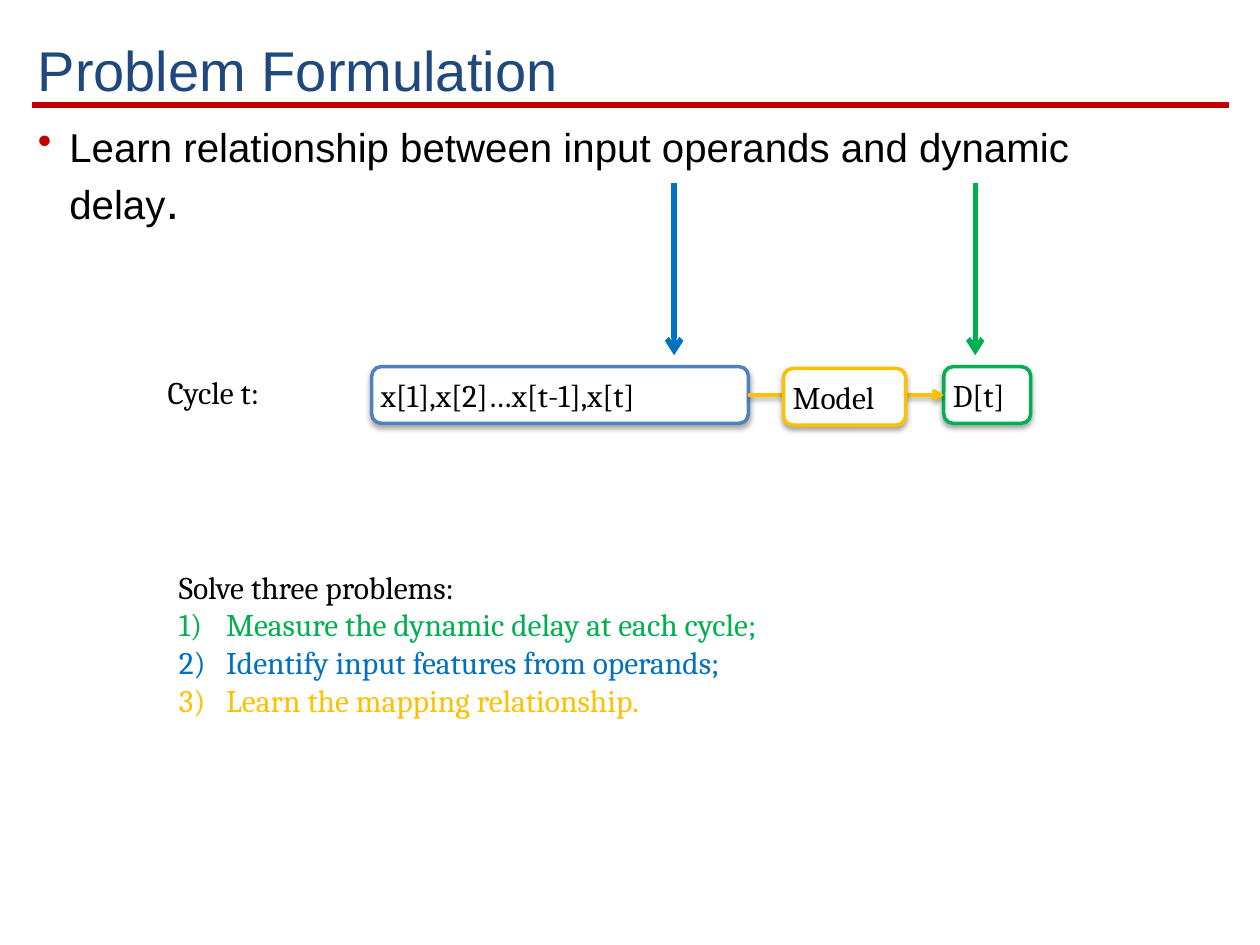
from dataclasses import dataclass
from typing import Optional

from pptx import Presentation
from pptx.dml.color import RGBColor
from pptx.enum.shapes import MSO_CONNECTOR, MSO_SHAPE
from pptx.enum.text import MSO_ANCHOR, MSO_AUTO_SIZE, PP_ALIGN
from pptx.oxml.ns import qn
from pptx.util import Pt
from lxml.etree import SubElement

BLACK = RGBColor(0, 0, 0)
WHITE = RGBColor(255, 255, 255)
NAVY = RGBColor(0x1F, 0x49, 0x7D)
RED = RGBColor(0xC0, 0, 0)
STEEL = RGBColor(0x4F, 0x81, 0xBD)
BLUE = RGBColor(0, 0x70, 0xC0)
GREEN = RGBColor(0, 0xB0, 0x50)
AMBER = RGBColor(0xFF, 0xC0, 0)

INSET = Pt(3.6)
FRAME = dict(word_wrap=True, margin_left=INSET, margin_right=INSET,
             margin_top=INSET, margin_bottom=INSET)


@dataclass
class Area:
    left: float
    top: float
    width: float
    height: float

    def lengths(self) -> list:
        return [Pt(v) for v in (self.left, self.top, self.width, self.height)]


@dataclass
class Style:
    size: float = 18
    font: str = "Cambria"
    color: RGBColor = BLACK


@dataclass
class Bullet:
    indent: float
    tag: str
    attrs: dict
    color: Optional[RGBColor] = None


@dataclass
class Block:
    text: str
    area: Area
    color: RGBColor


def set_frame(s, anchor=MSO_ANCHOR.TOP, auto_size=MSO_AUTO_SIZE.NONE):
    tf = s.text_frame
    values = dict(FRAME, vertical_anchor=anchor, auto_size=auto_size)
    for name, value in values.items():
        setattr(tf, name, value)
    return tf


def add_run(p, text: str, style: Style) -> None:
    r = p.add_run()
    r.text = text
    for name, value in dict(size=Pt(style.size), name=style.font).items():
        setattr(r.font, name, value)
    r.font.color.rgb = style.color


def set_bullet(p, bullet: Bullet) -> None:
    pPr = p._p.get_or_add_pPr()
    pPr.set("marL", str(Pt(bullet.indent)))
    pPr.set("indent", str(-Pt(bullet.indent)))
    if bullet.color is not None:
        clr = SubElement(pPr, qn("a:buClr"))
        SubElement(clr, qn("a:srgbClr"), val=str(bullet.color))
    SubElement(pPr, qn(bullet.tag), **bullet.attrs)


def set_shadow(s, visible: bool) -> None:
    effects = SubElement(s.element.spPr, qn("a:effectLst"))
    if visible:
        shadow = SubElement(effects, qn("a:outerShdw"), blurRad=str(Pt(3)),
                            dist=str(Pt(1.8)), dir="5400000", rotWithShape="0")
        clr = SubElement(shadow, qn("a:srgbClr"), val=str(BLACK))
        SubElement(clr, qn("a:alpha"), val="35000")


def add_line(shapes, start: tuple, end: tuple, color: RGBColor,
             width: float = 3, arrow: bool = True, shadow: bool = False):
    s = shapes.add_connector(MSO_CONNECTOR.STRAIGHT, *map(Pt, start + end))
    s.line.color.rgb = color
    s.line.width = Pt(width)
    if arrow:
        SubElement(s.element.spPr.find(qn("a:ln")), qn("a:tailEnd"), type="arrow")
    set_shadow(s, shadow)
    return s


def add_block(shapes, block: Block):
    s = shapes.add_shape(MSO_SHAPE.ROUNDED_RECTANGLE, *block.area.lengths())
    s.fill.solid()
    s.fill.fore_color.rgb = WHITE
    s.line.color.rgb = block.color
    s.line.width = Pt(2)
    set_shadow(s, True)
    p = set_frame(s, MSO_ANCHOR.MIDDLE, MSO_AUTO_SIZE.SHAPE_TO_FIT_TEXT).paragraphs[0]
    p.alignment = PP_ALIGN.LEFT
    add_run(p, block.text, Style())
    return s


def add_label(shapes, text: str, area: Area, style: Style, anchor=MSO_ANCHOR.TOP):
    tf = set_frame(shapes.add_textbox(*area.lengths()), anchor)
    add_run(tf.paragraphs[0], text, style)
    return tf


def main() -> None:
    prs = Presentation()
    prs.slide_width, prs.slide_height = Pt(720), Pt(540)
    shapes = prs.slides.add_slide(prs.slide_layouts[6]).shapes

    add_line(shapes, (18, 60), (702, 60), RED, arrow=False)
    add_label(shapes, "Problem Formulation", Area(18, 12.24, 684, 54),
              Style(32, "Arial", NAVY), MSO_ANCHOR.MIDDLE)

    tf = add_label(shapes, "Learn relationship between input operands and dynamic delay",
                   Area(18, 66.24, 666, 473.76), Style(23, "Arial"))
    p = tf.paragraphs[0]
    add_run(p, ".", Style(28, "Arial"))
    p.space_before = Pt(6)
    set_bullet(p, Bullet(18, "a:buChar", dict(char="•"), RED))

    for x, color in ((385.2, BLUE), (557.3, GREEN)):
        add_line(shapes, (x, 104.8), (x, 203), color)

    operands = add_block(shapes, Block("x[1],x[2]…x[t-1],x[t]",
                                       Area(212.4, 209.5, 215.3, 32.4), STEEL))
    delay = add_block(shapes, Block("D[t]", Area(539.3, 209.5, 49.7, 32.4), GREEN))
    flow = add_line(shapes, (427.7, 225.7), (539.3, 225.7), AMBER, 2, shadow=True)
    flow.begin_connect(operands, 3)
    flow.end_connect(delay, 1)
    add_label(shapes, "Cycle t:", Area(92.2, 209.5, 107.3, 28.8), Style())
    add_block(shapes, Block("Model", Area(447.8, 210.5, 69.8, 32.4), AMBER))

    tf = add_label(shapes, "Solve three problems:", Area(98.6, 320.4, 478.8, 94.3),
                   Style(), MSO_ANCHOR.MIDDLE)
    problems = (("Measure the dynamic delay at each cycle;", GREEN),
                ("Identify input features from operands;", BLUE),
                ("Learn the mapping relationship.", AMBER))
    for text, color in problems:
        p = tf.add_paragraph()
        add_run(p, text, Style(color=color))
        set_bullet(p, Bullet(27, "a:buAutoNum", dict(type="arabicParenR")))

    prs.save("out.pptx")


if __name__ == "__main__":
    main()
